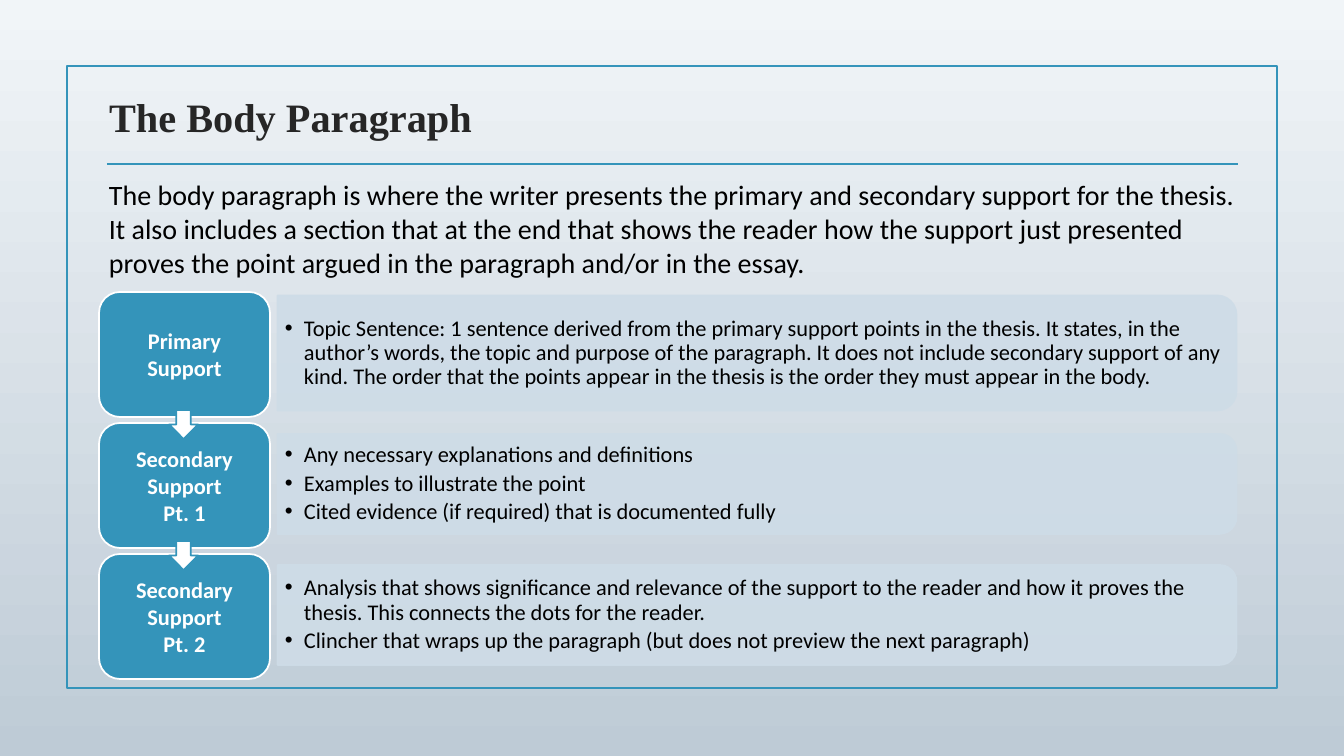
from lxml import etree
from pptx import Presentation
from pptx.dml.color import RGBColor
from pptx.enum.shapes import MSO_CONNECTOR, MSO_SHAPE
from pptx.enum.text import MSO_ANCHOR, PP_ALIGN
from pptx.oxml.ns import qn
from pptx.util import Emu, Pt

RECT, ROUND = MSO_SHAPE.RECTANGLE, MSO_SHAPE.ROUNDED_RECTANGLE
PANEL, ARROW = MSO_SHAPE.ROUND_2_SAME_RECTANGLE, MSO_SHAPE.DOWN_ARROW
MIDDLE, LEFT, CENTER = MSO_ANCHOR.MIDDLE, PP_ALIGN.LEFT, PP_ALIGN.CENTER
TEAL = RGBColor(0x34, 0x94, 0xBA)
PALE = RGBColor(0xCE, 0xDC, 0xE7)
WHITE = RGBColor(0xFF, 0xFF, 0xFF)
BLACK = RGBColor(0, 0, 0)
DARK = RGBColor(0x26, 0x26, 0x26)
SKY = RGBColor(0xF1, 0xF5, 0xF8)
MIST = RGBColor(0xBE, 0xCB, 0xD6)
SCALE = 914400 / 100.8


def px(*nums):
    """Turn pixel lengths into a list of EMU lengths."""
    return [Emu(round(n * SCALE)) for n in nums]


def add_box(kind, box, fill, line):
    shape = slide.shapes.add_shape(kind, *px(*box))
    shape.shadow.inherit = False
    if fill is None:
        shape.fill.background()
    else:
        shape.fill.solid()
        shape.fill.fore_color.rgb = fill
    shape.line.color.rgb = line
    shape.line.width = Pt(1.25)
    return shape


prs = Presentation()
prs.slide_width, prs.slide_height = px(1344, 756)
slide = prs.slides.add_slide(prs.slide_layouts[5])

back = slide.background.fill
back.gradient()
back.gradient_angle = 270
for stop, color in zip(back.gradient_stops, (SKY, MIST)):
    stop.color.rgb = color
back.gradient_stops[0].position = 0
back.gradient_stops[1].position = 1

# Frame, title and rule
add_box(RECT, (67, 66, 1210, 622), None, TEAL)
rule = slide.shapes.add_connector(MSO_CONNECTOR.STRAIGHT, *px(107, 164, 1238, 164))
rule.line.color.rgb = TEAL
rule.line.width = Pt(1.5)
etree.SubElement(rule._element.spPr, qn("a:effectLst"))

title = slide.shapes.title
title.left, title.top, title.width, title.height = px(99, 85, 1146, 62)
title.text_frame.text = "The Body Paragraph"
title.text_frame.vertical_anchor = MIDDLE
para = title.text_frame.paragraphs[0]
para.alignment = LEFT
para.font.name = "Times New Roman"
para.font.size = Pt(28.8)
para.font.bold = True
para.font.color.rgb = DARK

# Introduction
intro = slide.shapes.add_textbox(*px(99, 173, 1146, 112)).text_frame
intro.word_wrap = True
intro.text = (
    "The body paragraph is where the writer presents the primary and secondary "
    "support for the thesis. It also includes a section that at the end that shows "
    "the reader how the support just presented proves the point argued in the "
    "paragraph and/or in the essay."
)
para = intro.paragraphs[0]
para.font.name = "Calibri"
para.font.size = Pt(20)
para.font.color.rgb = BLACK

# Steps: label, panel height, bullet points
STEPS = [
    ("Primary\nSupport", 115, [
        "Topic Sentence: 1 sentence derived from the primary support points in the "
        "thesis. It states, in the author’s words, the topic and purpose of the "
        "paragraph. It does not include secondary support of any kind. The order that "
        "the points appear in the thesis is the order they must appear in the body.",
    ]),
    ("Secondary\nSupport\nPt. 1", 100, [
        "Any necessary explanations and definitions",
        "Examples to illustrate the point",
        "Cited evidence (if required) that is documented fully",
    ]),
    ("Secondary\nSupport\nPt. 2", 100, [
        "Analysis that shows significance and relevance of the support to the reader "
        "and how it proves the thesis. This connects the dots for the reader.",
        "Clincher that wraps up the paragraph (but does not preview the next paragraph)",
    ]),
]
PITCH, WIDE, MID_X = 131, 959, 757

for i, (label, high, points) in enumerate(STEPS):
    mid = 353 + i * PITCH
    # The panel is turned so that its rounded corners lie on the right
    panel = add_box(PANEL, (MID_X - high / 2, mid - WIDE / 2, high, WIDE), PALE, PALE)
    panel.rotation = 90
    for color in panel._element.spPr.iter(qn("a:srgbClr")):
        etree.SubElement(color, qn("a:alpha"), val="90000")

    body = slide.shapes.add_textbox(*px(278, mid - high / 2, 954, high)).text_frame
    block = add_box(ROUND, (99, mid - 61, 171, 125), TEAL, WHITE).text_frame
    body.text = "\n".join(points)
    block.text = label
    for frame, color in ((body, BLACK), (block, WHITE)):
        frame.word_wrap = True
        frame.vertical_anchor = MIDDLE
        frame.margin_left, frame.margin_right = px(7, 7)
        frame.margin_top, frame.margin_bottom = px(3, 3)
        for para in frame.paragraphs:
            if frame is body:
                props = para._p.get_or_add_pPr()
                props.set("marL", str(px(19)[0]))
                props.set("indent", str(px(-19)[0]))
                etree.SubElement(props, qn("a:buFont"), typeface="Arial")
                etree.SubElement(props, qn("a:buChar"), char="•")
                para.line_spacing = 0.9
                para.space_after = Pt(3)
            else:
                para.alignment = CENTER
                para.font.bold = True
            para.font.name = "Calibri"
            para.font.size = Pt(16)
            para.font.color.rgb = color

for i in range(len(STEPS) - 1):
    add_box(ARROW, (169, 410 + i * PITCH, 29, 29), WHITE, TEAL)

prs.save("out.pptx")
